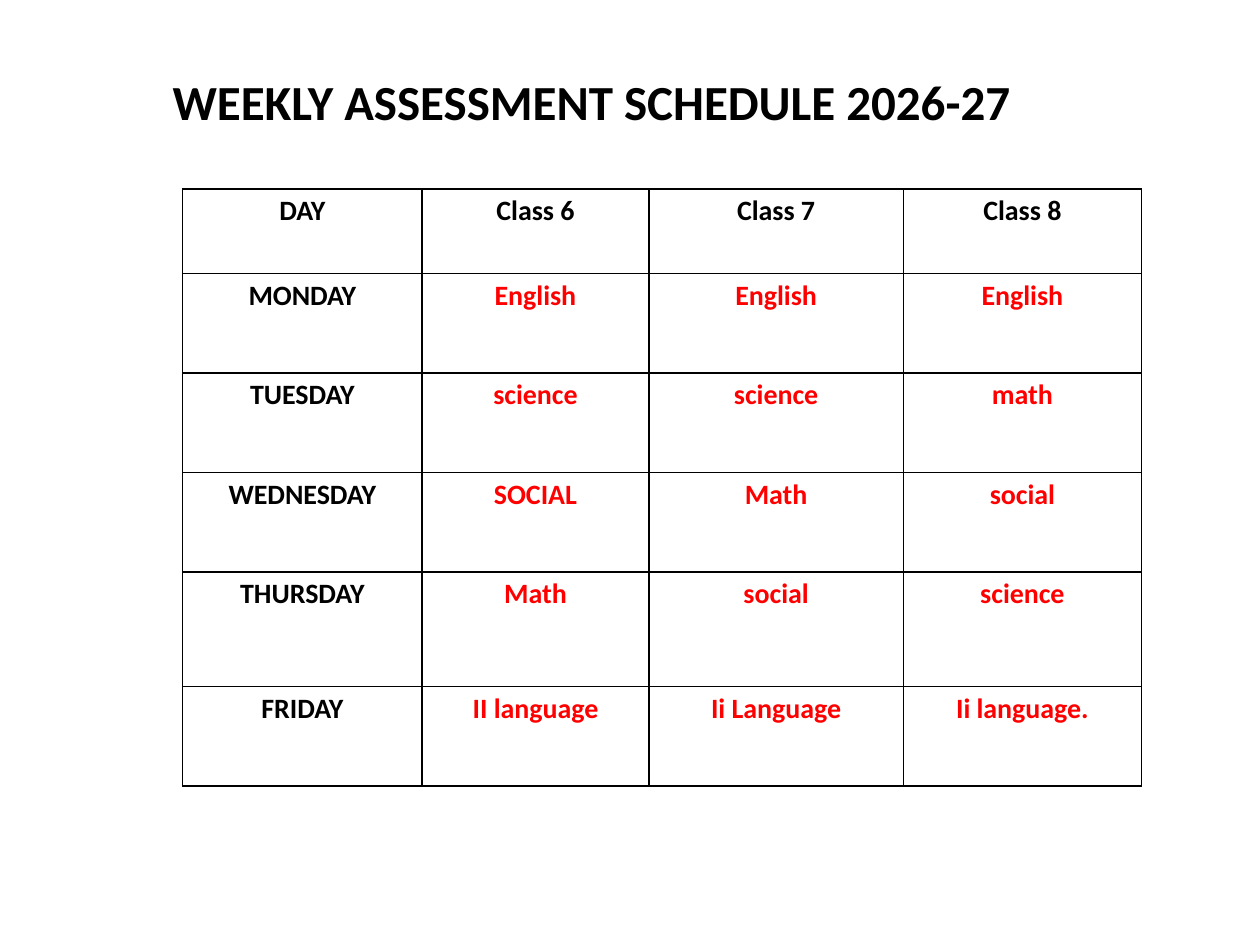
from lxml import etree
from pptx import Presentation
from pptx.dml.color import RGBColor
from pptx.enum.text import MSO_ANCHOR, MSO_AUTO_SIZE, PP_ALIGN
from pptx.oxml.ns import qn
from pptx.util import Inches, Pt

TOP = MSO_ANCHOR.TOP
NO_FIT = MSO_AUTO_SIZE.NONE
LEFT, CENTER = PP_ALIGN.LEFT, PP_ALIGN.CENTER

COLORS = {"text": "000000", "subject": "FF0000", "border": "000000"}
COL_WIDTHS = [1.9, 1.8, 2.02, 1.89]
ROW_HEIGHTS = [0.67, 0.79, 0.79, 0.79, 0.91, 0.79]
SCHEDULE = [
    ["DAY", "Class 6", "Class 7", "Class 8"],
    ["MONDAY", "English", "English", "English"],
    ["TUESDAY", "science", "science", "math"],
    ["WEDNESDAY", "SOCIAL", "Math", "social"],
    ["THURSDAY", "Math", "social", "science"],
    ["FRIDAY", "II language", "Ii Language", "Ii language."],
]
CELL_FORMAT = {
    "margin_left": Inches(0.07),
    "margin_right": Inches(0.07),
    "margin_top": 0,
    "margin_bottom": 0,
    "vertical_anchor": TOP,
}


def write(p, text, size, color, align):
    p.alignment = align
    r = p.add_run()
    r.text = text
    font_format = {"name": "Calibri", "size": Pt(size), "bold": True}
    for name, value in font_format.items():
        setattr(r.font, name, value)
    r.font.color.rgb = RGBColor.from_string(COLORS[color])


def add_borders(cell):
    tcPr = cell._tc.get_or_add_tcPr()
    for i, side in enumerate(["lnL", "lnR", "lnT", "lnB"]):
        ln = etree.Element(qn(f"a:{side}"), w=str(Pt(1)))
        fill = etree.SubElement(ln, qn("a:solidFill"))
        etree.SubElement(fill, qn("a:srgbClr"), val=COLORS["border"])
        tcPr.insert(i, ln)


prs = Presentation()
prs.slide_width = Inches(10)
prs.slide_height = Inches(7.5)
s = prs.slides.add_slide(prs.slide_layouts[5])

title = s.shapes.title
title.left, title.top = Inches(1.27), Inches(0.52)
title.width, title.height = Inches(7.84), Inches(0.98)
tf = title.text_frame
title_format = {"word_wrap": True, "auto_size": NO_FIT, "vertical_anchor": TOP}
for name, value in title_format.items():
    setattr(tf, name, value)
write(tf.paragraphs[0], "WEEKLY ASSESSMENT SCHEDULE 2026-27", 28, "text", LEFT)

frame = s.shapes.add_table(
    len(SCHEDULE), len(COL_WIDTHS), Inches(1.45), Inches(1.5),
    Inches(sum(COL_WIDTHS)), Inches(sum(ROW_HEIGHTS)),
)
table = frame.table
table.horz_banding = False
for column, width in zip(table.columns, COL_WIDTHS):
    column.width = Inches(width)
for row, height in zip(table.rows, ROW_HEIGHTS):
    row.height = Inches(height)

for i, entries in enumerate(SCHEDULE):
    for j, text in enumerate(entries):
        cell = table.cell(i, j)
        for name, value in CELL_FORMAT.items():
            setattr(cell, name, value)
        cell.fill.background()
        add_borders(cell)
        p = cell.text_frame.paragraphs[0]
        p.line_spacing = 1.15
        write(p, text, 16, "subject" if i and j else "text", CENTER)

prs.save("out.pptx")
